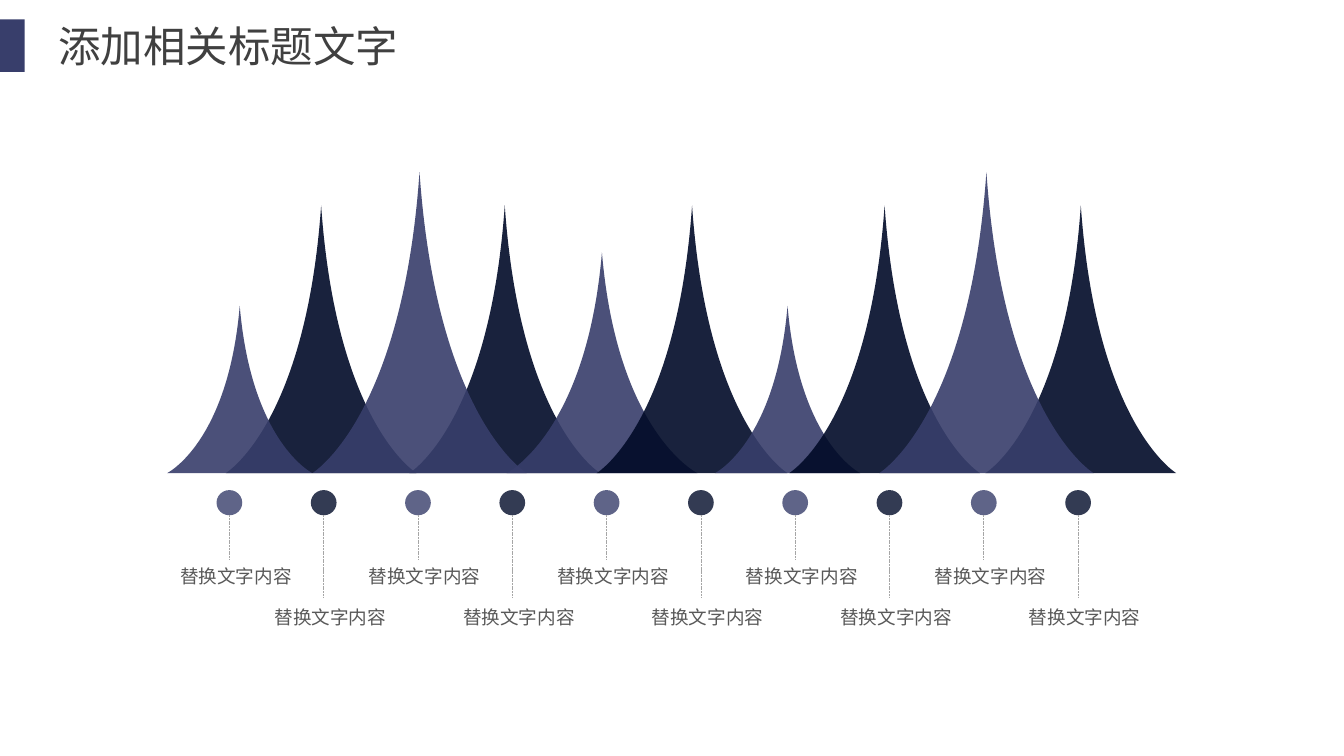
"""Build a slide of ten overlapping peaks with staggered labels."""
import lxml.etree
import pptx
import pptx.dml.color
import pptx.enum.dml
import pptx.enum.shapes
import pptx.enum.text
import pptx.oxml.ns
import pptx.util

Pt = pptx.util.Pt
qn = pptx.oxml.ns.qn
INDIGO, NAVY = "383E6B", "010B28"


def color(hex_code):
    return pptx.dml.color.RGBColor.from_string(hex_code)


def paint(shape, hex_code, opacity=100):
    shape.shadow.inherit = False
    shape.line.fill.background()
    shape.fill.solid()
    shape.fill.fore_color.rgb = color(hex_code)
    if opacity < 100:
        tint = shape._element.spPr.find(qn("a:solidFill"))[0]
        lxml.etree.SubElement(tint, qn("a:alpha")).set("val", str(opacity * 1000))


deck = pptx.Presentation()
deck.slide_width, deck.slide_height = Pt(1012.32), Pt(569.52)
slide = deck.slides.add_slide(deck.slide_layouts[5])

heading = slide.shapes.title
heading.left, heading.top, heading.width, heading.height = Pt(44), Pt(15), Pt(312), Pt(39)
heading_frame = heading.text_frame
heading_frame.text = "添加相关标题文字"
heading_frame.margin_left = heading_frame.margin_right = 0
heading_frame.margin_top = heading_frame.margin_bottom = 0
heading_frame.auto_size = pptx.enum.text.MSO_AUTO_SIZE.NONE
heading_frame.vertical_anchor = pptx.enum.text.MSO_ANCHOR.MIDDLE
heading_line = heading_frame.paragraphs[0]
heading_line.alignment = pptx.enum.text.PP_ALIGN.LEFT
heading_line.font.name = "Arial"
heading_line.font.size = Pt(32)
heading_line.font.color.rgb = color("404040")

base = 356.4
peaks = [
    (241.9, 71.8, 201.6, NAVY),
    (380.2, 71.8, 201.6, NAVY),
    (180.6, 54.7, 126, INDIGO),
    (316, 80.7, 226.8, INDIGO),
    (453.4, 71.8, 166.3, INDIGO),
    (521.3, 71.8, 201.6, NAVY),
    (593.2, 54.7, 126, INDIGO),
    (666.3, 71.8, 201.6, NAVY),
    (814.1, 71.8, 201.6, NAVY),
    (743, 80.7, 226.8, INDIGO),
]
for center, half_width, height, shade in peaks:
    right, apex, left = (half_width, 0), (0, height), (-half_width, 0)
    bend_right, bend_left = (0.16 * half_width, 0.18 * height), (-0.16 * half_width, 0.18 * height)
    outline = [(Pt(center + x), Pt(base - y))
               for x, y in (right, right, bend_right, apex, bend_left, left, left)]
    builder = slide.shapes.build_freeform(*outline[0])
    builder.add_line_segments(outline[1:], close=True)
    peak = builder.convert_to_shape()
    segments = peak._element.xpath(".//a:lnTo")
    for side in (segments[:3], segments[3:6]):
        curve = lxml.etree.Element(qn("a:cubicBezTo"))
        side[0].addprevious(curve)
        for segment in side:
            curve.append(segment[0])
            segment.getparent().remove(segment)
    paint(peak, shade, 90)

dot_width, dot_height, dot_top = 19.4, 19, 369.2
dot_bottom = dot_top + dot_height
label_width = 85
for index in range(10):
    center = 172.8 + 71.03 * index
    shade, stem_end, label_top = [(INDIGO, 421, 422), (NAVY, 450.7, 453)][index % 2]
    marker = slide.shapes.add_group_shape().shapes

    dot = marker.add_shape(pptx.enum.shapes.MSO_SHAPE.OVAL, Pt(center - dot_width / 2),
                           Pt(dot_top), Pt(dot_width), Pt(dot_height))
    paint(dot, shade, 80)

    stem = marker.add_connector(pptx.enum.shapes.MSO_CONNECTOR.STRAIGHT, Pt(center),
                                Pt(dot_bottom), Pt(center), Pt(stem_end))
    stem.line.color.rgb = color("A6A6A6")
    stem.line.width = Pt(0.5)
    stem.line.dash_style = pptx.enum.dml.MSO_LINE.SQUARE_DOT
    lxml.etree.SubElement(stem._element.spPr, qn("a:effectLst"))

    label = marker.add_textbox(Pt(center + 5 - label_width / 2), Pt(label_top),
                               Pt(label_width), Pt(20.2)).text_frame
    label.margin_left = label.margin_right = label.margin_top = label.margin_bottom = 0
    label.word_wrap = False
    label.auto_size = pptx.enum.text.MSO_AUTO_SIZE.SHAPE_TO_FIT_TEXT
    label.text = "替换文字内容"
    caption = label.paragraphs[0]
    caption.alignment = pptx.enum.text.PP_ALIGN.CENTER
    caption.line_spacing = 1.2
    caption.font.name = "Arial"
    caption.font.size = Pt(14)
    caption.font.color.rgb = color("595959")

accent = slide.shapes.add_shape(pptx.enum.shapes.MSO_SHAPE.RECTANGLE, 0, Pt(14.6), Pt(18.6), Pt(39.6))
paint(accent, INDIGO)

deck.save("out.pptx")
